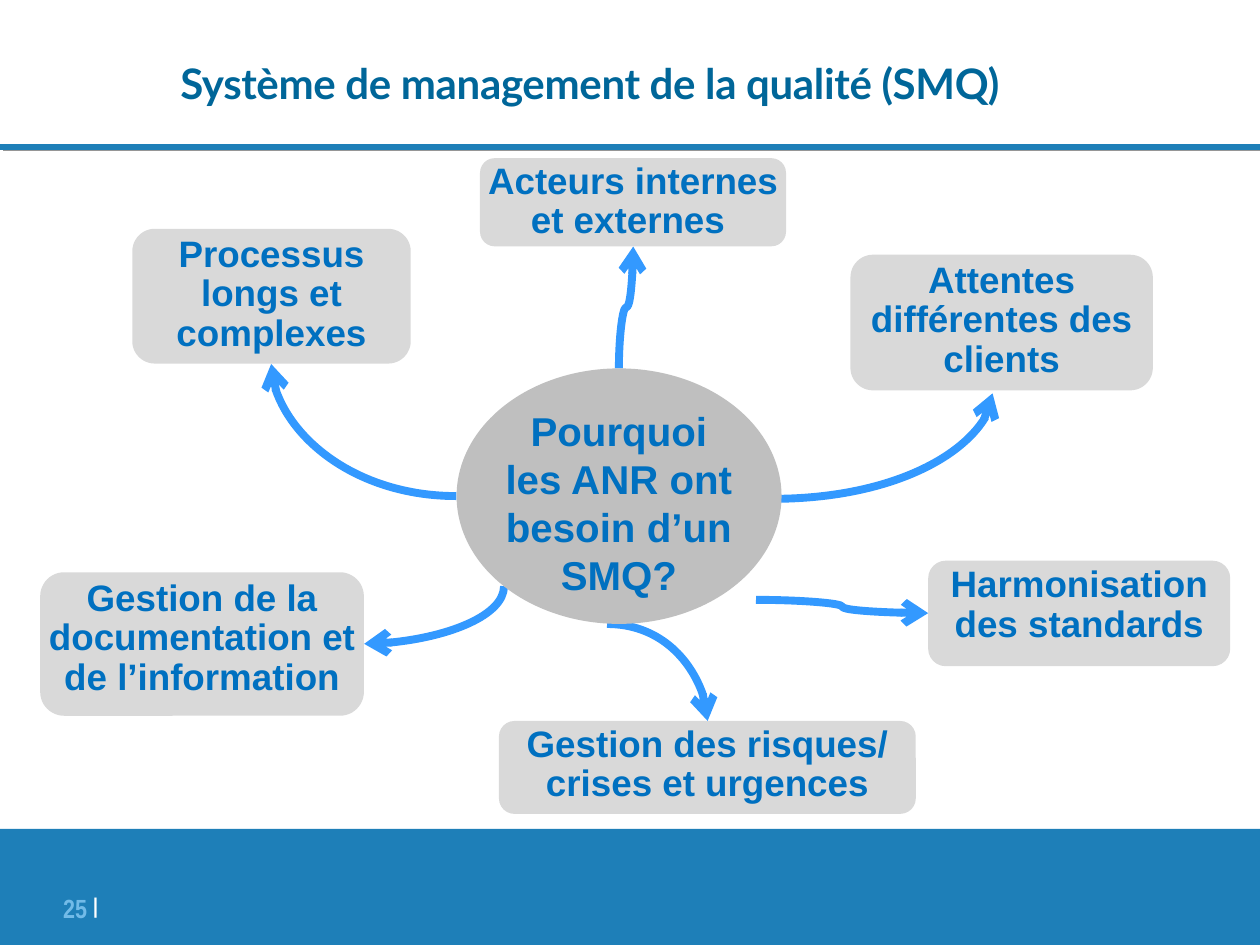
from dataclasses import dataclass

from lxml.etree import SubElement
from pptx import Presentation
from pptx.dml.color import RGBColor
from pptx.enum.shapes import MSO_CONNECTOR as Link, MSO_SHAPE as Shape
from pptx.enum.text import MSO_ANCHOR as Anchor, MSO_AUTO_SIZE as AutoSize, PP_ALIGN as Align
from pptx.oxml.ns import qn
from pptx.util import Pt


@dataclass(frozen=True)
class Theme:
    band: str = "1E7FB8"
    rule_shadow: str = "969696"
    title: str = "006699"
    text: str = "0070C0"
    topic: str = "D9D9D9"
    hub: str = "BFBFBF"
    arrow: str = "3399FF"
    page_number: str = "72BBE8"
    white: str = "FFFFFF"
    body_font: str = "Arial"
    title_font: str = "Lato"
    number_font: str = "Arial Narrow"
    title_size: float = 24
    hub_size: float = 23
    topic_size: float = 21
    number_size: float = 15


@dataclass(frozen=True)
class Topic:
    text: str
    left: float
    top: float
    width: float
    height: float


@dataclass(frozen=True)
class Arrow:
    start: tuple[float, float]
    end: tuple[float, float]
    geometry: str = "curvedConnector2"
    leaves_vertically: bool = False


THEME = Theme()
WIDTH, HEIGHT = 720, 540

TOPICS = [
    Topic("Processus longs et complexes", 75.6, 130.8, 159.1, 77),
    Topic("Attentes différentes des clients", 486, 145.6, 172.8, 77.5),
    Topic("Acteurs internes et externes ", 274.3, 90.4, 174.9, 50.4),
    Topic("Harmonisation des standards", 530.4, 320.4, 172.6, 60.3),
    Topic("Gestion de la documentation et de l’information", 23, 327, 185, 82),
    Topic("Gestion des risques/ crises et urgences", 285.1, 412, 238.2, 53.1),
]

ARROWS = [
    Arrow((260.8, 283.5), (155, 208)),
    Arrow((288, 335), (208.1, 367.9), leaves_vertically=True),
    Arrow((353.6, 210.5), (361.8, 140.9), "curvedConnector3", leaves_vertically=True),
    Arrow((441.4, 285.1), (567.2, 224.8)),
    Arrow((346.9, 356.6), (404.4, 412)),
    Arrow((432, 342.8), (530.4, 350.4), "curvedConnector3"),
]


def color(code: str) -> RGBColor:
    return RGBColor.from_string(code)


def write(para, text: str, *, font: str, size: float, fill: str, **character_attributes: str):
    """Add a bold run; extra keywords become attributes of its properties."""
    span = para.add_run()
    span.text = text
    span.font.name = font
    span.font.size = Pt(size)
    span.font.bold = True
    span.font.color.rgb = color(fill)
    for name, value in character_attributes.items():
        span.font._element.set(name, value)


def prepare(box, align: Align, line_spacing=None):
    """Strip margins, wrap from the top and return the first paragraph."""
    frame = box.text_frame
    frame.margin_left = frame.margin_top = frame.margin_right = frame.margin_bottom = 0
    frame.word_wrap = True
    frame.auto_size = AutoSize.NONE
    frame.vertical_anchor = Anchor.TOP
    para = frame.paragraphs[0]
    para.alignment = align
    para.space_before = Pt(0)
    if line_spacing is not None:
        para.line_spacing = line_spacing
    return para


def add_filled(page, kind: Shape, left: float, top: float, width: float, height: float, fill: str):
    box = page.shapes.add_shape(kind, Pt(left), Pt(top), Pt(width), Pt(height))
    box.shadow.inherit = False
    box.fill.solid()
    box.fill.fore_color.rgb = color(fill)
    box.line.fill.background()
    return box


def add_line(page, kind: Link, start: tuple, end: tuple, fill: str, weight: float):
    """Return the connector and its empty effect list."""
    line = page.shapes.add_connector(kind, *(Pt(value) for value in (*start, *end)))
    line.line.color.rgb = color(fill)
    line.line.width = Pt(weight)
    effects = SubElement(line._element.spPr, qn("a:effectLst"))
    return line, effects


def add_arrow(page, arrow: Arrow) -> None:
    """Draw a curve; one that leaves vertically is a horizontal one turned by 90°."""
    start, end = arrow.start, arrow.end
    if arrow.leaves_vertically:
        middle_x, middle_y = (start[0] + end[0]) / 2, (start[1] + end[1]) / 2
        half_x, half_y = (end[1] - start[1]) / 2, (start[0] - end[0]) / 2
        start = middle_x - half_x, middle_y - half_y
        end = middle_x + half_x, middle_y + half_y
    curve, _ = add_line(page, Link.CURVE, start, end, THEME.arrow, 4.5)
    properties = curve._element.spPr
    properties.find(qn("a:prstGeom")).set("prst", arrow.geometry)
    if arrow.leaves_vertically:
        properties.find(qn("a:xfrm")).set("rot", str(90 * 60000))
    SubElement(properties.find(qn("a:ln")), qn("a:tailEnd"), type="arrow")


def add_topic(page, topic: Topic) -> None:
    box = add_filled(page, Shape.ROUNDED_RECTANGLE, topic.left, topic.top,
                     topic.width, topic.height, THEME.topic)
    write(prepare(box, Align.CENTER, 0.9), topic.text,
          font=THEME.body_font, size=THEME.topic_size, fill=THEME.text)


def add_hub(page) -> None:
    hub = add_filled(page, Shape.OVAL, 260.9, 210.5, 185.7, 146, THEME.hub)
    write(prepare(hub, Align.CENTER), "Pourquoi les ANR ont besoin d’un SMQ?",
          font=THEME.body_font, size=THEME.hub_size, fill=THEME.text)


def add_frame(page) -> None:
    """Draw the header rule, the footer band and the page number."""
    _, effects = add_line(page, Link.STRAIGHT, (0, 84), (WIDTH, 84), THEME.band, 3)
    shadow = SubElement(effects, qn("a:outerShdw"), dist=str(Pt(2.2)), dir=str(27 * 60000))
    SubElement(shadow, qn("a:srgbClr"), val=THEME.rule_shadow)
    add_filled(page, Shape.RECTANGLE, 0, 473.6, WIDTH, HEIGHT - 473.6, THEME.band)
    box = page.shapes.add_textbox(Pt(28), Pt(504), Pt(28), Pt(26))
    para = prepare(box, Align.RIGHT)
    write(para, "25 ", font=THEME.number_font, size=THEME.number_size, fill=THEME.page_number)
    write(para, "|", font=THEME.number_font, size=THEME.topic_size, fill=THEME.white,
          baseline="14000")


def format_title(page) -> None:
    title = page.shapes.title
    title.left, title.top, title.width, title.height = Pt(103), Pt(26.6), Pt(545), Pt(34.6)
    write(prepare(title, Align.LEFT, Pt(35)), "Système de management de la qualité (SMQ)",
          font=THEME.title_font, size=THEME.title_size, fill=THEME.title, spc="-20")


def main() -> None:
    deck = Presentation()
    deck.slide_width, deck.slide_height = Pt(WIDTH), Pt(HEIGHT)
    page = deck.slides.add_slide(deck.slide_layouts[5])
    format_title(page)
    add_frame(page)
    for topic in TOPICS:
        add_topic(page, topic)
    for arrow in ARROWS:
        add_arrow(page, arrow)
    add_hub(page)
    deck.save("out.pptx")


if __name__ == "__main__":
    main()
